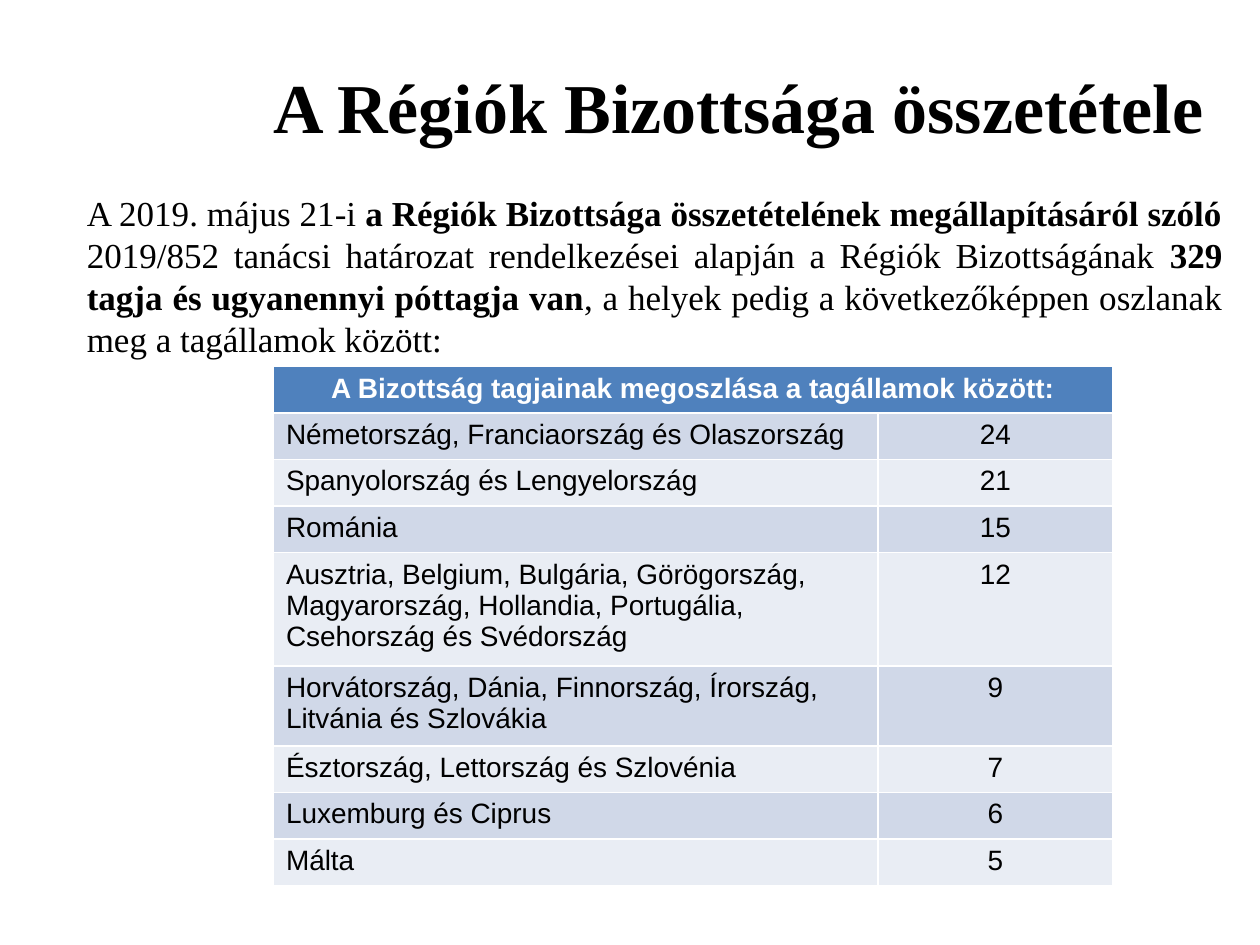
from typing import NamedTuple

from pptx import Presentation
from pptx.dml.color import RGBColor
from pptx.enum.text import MSO_ANCHOR, MSO_AUTO_SIZE, PP_ALIGN
from pptx.util import Inches, Pt

BLACK = RGBColor(0x00, 0x00, 0x00)
WHITE = RGBColor(0xFF, 0xFF, 0xFF)
HEADER_BLUE = RGBColor(0x4F, 0x81, 0xBD)
BANDS = (RGBColor(0xD0, 0xD8, 0xE8), RGBColor(0xE9, 0xED, 0xF4))

SERIF = {"name": "Times New Roman"}
TITLE_FONT = {**SERIF, "size": Pt(40), "bold": True}
INTRO_FONT = {**SERIF, "size": Pt(20)}
TABLE_FONT = {"name": "Arial", "size": Pt(16)}


class Phrase(NamedTuple):
    text: str
    bold: bool = False


class Seats(NamedTuple):
    countries: str
    count: int
    height: float = 0.37


TITLE = "A Régiók Bizottsága összetétele"
INTRO = (
    Phrase("A 2019. május 21-i "),
    Phrase("a Régiók Bizottsága összetételének megállapításáról szóló ", True),
    Phrase("2019/852 tanácsi határozat rendelkezései alapján a Régiók Bizottságának "),
    Phrase("329 tagja és ugyanennyi póttagja van", True),
    Phrase(", a helyek pedig a következőképpen oszlanak meg a tagállamok között:"),
)
TABLE_HEADING = "A Bizottság tagjainak megoszlása a tagállamok között:"
HEADING_HEIGHT = 0.36
COLUMN_WIDTHS = (4.8, 1.86)
DISTRIBUTION = (
    Seats("Németország, Franciaország és Olaszország", 24),
    Seats("Spanyolország és Lengyelország", 21),
    Seats("Románia", 15),
    Seats("Ausztria, Belgium, Bulgária, Görögország, Magyarország, Hollandia, "
          "Portugália, Csehország és Svédország", 12, 0.9),
    Seats("Horvátország, Dánia, Finnország, Írország, Litvánia és Szlovákia", 9, 0.63),
    Seats("Észtország, Lettország és Szlovénia", 7),
    Seats("Luxemburg és Ciprus", 6),
    Seats("Málta", 5),
)


def add_phrase(paragraph, text: str, style: dict, color: RGBColor = BLACK) -> None:
    run = paragraph.add_run()
    run.text = text
    for attribute, value in style.items():
        setattr(run.font, attribute, value)
    run.font.color.rgb = color


def add_title(slide) -> None:
    title = slide.shapes.title
    title.left, title.top = Inches(1.61), Inches(0.29)
    title.width, title.height = Inches(8.5), Inches(1.1)
    title.text_frame.vertical_anchor = MSO_ANCHOR.MIDDLE
    heading = title.text_frame.paragraphs[0]
    heading.alignment = PP_ALIGN.CENTER
    add_phrase(heading, TITLE, TITLE_FONT)


def add_intro(slide) -> None:
    box = slide.shapes.add_textbox(Inches(0.59), Inches(1.47), Inches(9.21), Inches(1.45))
    box.text_frame.word_wrap = True
    box.text_frame.auto_size = MSO_AUTO_SIZE.SHAPE_TO_FIT_TEXT
    intro = box.text_frame.paragraphs[0]
    intro.alignment = PP_ALIGN.JUSTIFY
    for phrase in INTRO:
        add_phrase(intro, phrase.text, {**INTRO_FONT, "bold": phrase.bold})


def fill_cell(cell, text: str, fill: RGBColor, align: PP_ALIGN = PP_ALIGN.CENTER,
              color: RGBColor = BLACK, bold: bool = False) -> None:
    cell.fill.solid()
    cell.fill.fore_color.rgb = fill
    paragraph = cell.text_frame.paragraphs[0]
    paragraph.alignment = align
    add_phrase(paragraph, text, {**TABLE_FONT, "bold": bold}, color)


def add_distribution(slide) -> None:
    heights = [HEADING_HEIGHT, *(seats.height for seats in DISTRIBUTION)]
    table = slide.shapes.add_table(
        len(heights), len(COLUMN_WIDTHS), Inches(2.17), Inches(2.91),
        Inches(sum(COLUMN_WIDTHS)), Inches(sum(heights))).table
    for column, width in zip(table.columns, COLUMN_WIDTHS):
        column.width = Inches(width)
    for row, height in zip(table.rows, heights):
        row.height = Inches(height)

    heading = table.cell(0, 0)
    heading.merge(table.cell(0, 1))
    fill_cell(heading, TABLE_HEADING, HEADER_BLUE, color=WHITE, bold=True)
    for index, seats in enumerate(DISTRIBUTION):
        band = BANDS[index % 2]
        fill_cell(table.cell(index + 1, 0), seats.countries, band, PP_ALIGN.LEFT)
        fill_cell(table.cell(index + 1, 1), str(seats.count), band)


def main() -> None:
    deck = Presentation()
    deck.slide_width, deck.slide_height = Inches(10), Inches(7.5)
    title_only = deck.slide_layouts[5]
    slide = deck.slides.add_slide(title_only)
    add_title(slide)
    add_intro(slide)
    add_distribution(slide)
    deck.save("out.pptx")


if __name__ == "__main__":
    main()
